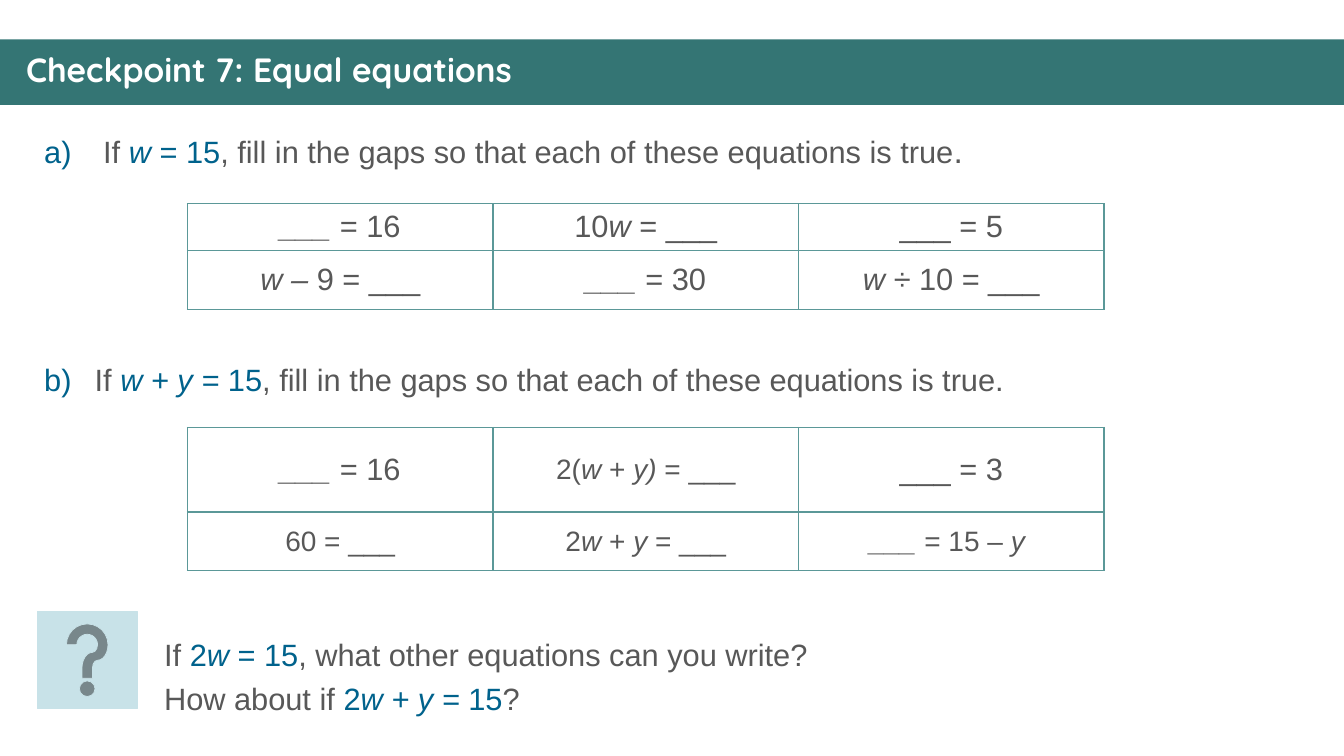
from lxml import etree
from pptx import Presentation
from pptx import util as u
from pptx.dml.color import RGBColor
from pptx.enum import shapes, text
from pptx.oxml import ns

TEAL, PALE, BORDER = "347574", "C8E2E8", "5B9898"
GREY, BLUE, WHITE = "585858", "00628C", "FFFFFF"
ITALIC = {"italic": True}
KEY = {"color": BLUE}
KEY_ITALIC = {"color": BLUE, "italic": True}
SMALL = {"size": 20, "before": 4}

TITLE = "Checkpoint 7: Equal equations"
GAPS = ", fill in the gaps so that each of these equations is true"

QUESTIONS = [
    (1.24, 0.5, 1, [(" If ", {}), ("w ", KEY_ITALIC), ("= 15", KEY),
                    (GAPS, {}), (".", {"size": 24})]),
    (3.53, 0.47, 2, [("If ", {}), ("w + y = ", KEY_ITALIC), ("15", KEY),
                     (GAPS + ".", {})]),
]

EXTENSION = [
    [("If ", {}), ("2", KEY), ("w ", KEY_ITALIC), ("= 15", KEY),
     (", what other equations can you write?", {})],
    [("How about if ", {}), ("2", KEY), ("w + y = ", KEY_ITALIC),
     ("15", KEY), ("?", {})],
]

TABLES = [
    (2.02, [0.46, 0.58], [
        [([("___ ", ITALIC), ("= 16", {})], {}),
         ([("10", {}), ("w", ITALIC), (" = ___", {})], {}),
         ([("___ = 5", {})], {})],
        [([("w – ", ITALIC), ("9 = ___", {})], {}),
         ([("___ ", ITALIC), ("= 30", {})], {}),
         ([("w ÷ ", ITALIC), ("10 = ___", {})], {})],
    ]),
    (4.24, [0.84, 0.58], [
        [([("___ ", ITALIC), ("= 16", {})], {}),
         ([("2(", {}), ("w ", ITALIC), ("+ ", {}), ("y)", ITALIC), (" = ___", {})], SMALL),
         ([("___ = 3", {})], {})],
        [([("60 = ___", {})], SMALL),
         ([("2", {}), ("w", ITALIC), (" + ", {}), ("y", ITALIC), (" = ___", {})], SMALL),
         ([("___ ", ITALIC), ("= 15 – ", {}), ("y ", ITALIC)], SMALL)],
    ]),
]
TABLE_LEFT, COLUMN_WIDTH = 1.86, 3.03


def rgb(value):
    return RGBColor.from_string(value)


def write(paragraph, runs, size=22, before=0, align=text.PP_ALIGN.LEFT):
    paragraph.alignment = align
    paragraph.space_before = u.Pt(before)
    for words, style in runs:
        look = {"size": size, "color": GREY, "italic": False, "bold": False,
                "font": "Arial", **style}
        run = paragraph.add_run()
        run.text = words
        run.font.name = look["font"]
        run.font.size = u.Pt(look["size"])
        run.font.bold = look["bold"]
        run.font.italic = look["italic"]
        run.font.color.rgb = rgb(look["color"])


def add_text(slide, left, top, width, height, lines, **style):
    box = slide.shapes.add_textbox(*map(u.Inches, (left, top, width, height)))
    frame = box.text_frame
    frame.word_wrap = True
    for index, runs in enumerate(lines):
        paragraph = frame.add_paragraph() if index else frame.paragraphs[0]
        write(paragraph, runs, **style)
    return frame.paragraphs[0]


def add_letter(paragraph, number):
    properties = paragraph._p.get_or_add_pPr()
    properties.set("marL", str(u.Inches(0.5)))
    properties.set("indent", str(u.Inches(-0.5)))
    color = etree.SubElement(properties, ns.qn("a:buClr"))
    etree.SubElement(color, ns.qn("a:srgbClr"), val=BLUE)
    etree.SubElement(properties, ns.qn("a:buFont"), typeface="+mj-lt")
    etree.SubElement(properties, ns.qn("a:buAutoNum"),
                     type="alphaLcParenR", startAt=str(number))


def add_block(slide, kind, left, top, width, height, color):
    shape = slide.shapes.add_shape(kind, *map(u.Inches, (left, top, width, height)))
    shape.shadow.inherit = False
    shape.fill.solid()
    shape.fill.fore_color.rgb = rgb(color)
    shape.line.color.rgb = rgb(color)
    shape.line.width = u.Pt(0.5)
    return shape


def add_borders(cell):
    properties = cell._tc.get_or_add_tcPr()
    for index, side in enumerate(("lnL", "lnR", "lnT", "lnB")):
        line = etree.Element(ns.qn("a:" + side), w=str(u.Pt(1)))
        fill = etree.SubElement(line, ns.qn("a:solidFill"))
        etree.SubElement(fill, ns.qn("a:srgbClr"), val=BORDER)
        properties.insert(index, line)


def add_equations(slide, top, heights, rows):
    columns = len(rows[0])
    table = slide.shapes.add_table(
        len(rows), columns, u.Inches(TABLE_LEFT), u.Inches(top),
        u.Inches(COLUMN_WIDTH * columns), u.Inches(sum(heights))).table
    table.first_row = table.horz_banding = False
    for column in table.columns:
        column.width = u.Inches(COLUMN_WIDTH)
    for r, (height, row) in enumerate(zip(heights, rows)):
        table.rows[r].height = u.Inches(height)
        for c, (runs, style) in enumerate(row):
            cell = table.cell(r, c)
            cell.fill.background()
            cell.vertical_anchor = text.MSO_ANCHOR.MIDDLE
            write(cell.text_frame.paragraphs[0], runs,
                  align=text.PP_ALIGN.CENTER, **style)
            add_borders(cell)


def main():
    presentation = Presentation()
    presentation.slide_width = u.Inches(13.33)
    presentation.slide_height = u.Inches(7.5)
    slide = presentation.slides.add_slide(presentation.slide_layouts[6])

    band = add_block(slide, shapes.MSO_SHAPE.RECTANGLE, 0, 0.39, 13.33, 0.65, TEAL)
    band.line.fill.background()
    heading = {"font": "Quicksand", "size": 24, "bold": True, "color": WHITE}
    title = add_text(slide, 0.16, 0.48, 13.04, 0.47, [[(TITLE, heading)]], before=10)
    title.line_spacing = 0.9

    add_block(slide, shapes.MSO_SHAPE.ACTION_BUTTON_HELP, 0.37, 6.07, 0.99, 0.96, PALE)
    for top, height, number, runs in QUESTIONS:
        add_letter(add_text(slide, 0.34, top, 11.79, height, [runs], before=5), number)
    add_text(slide, 1.53, 6.26, 8.36, 0.92, EXTENSION, before=5)
    for top, heights, rows in TABLES:
        add_equations(slide, top, heights, rows)

    presentation.save("out.pptx")


if __name__ == "__main__":
    main()
